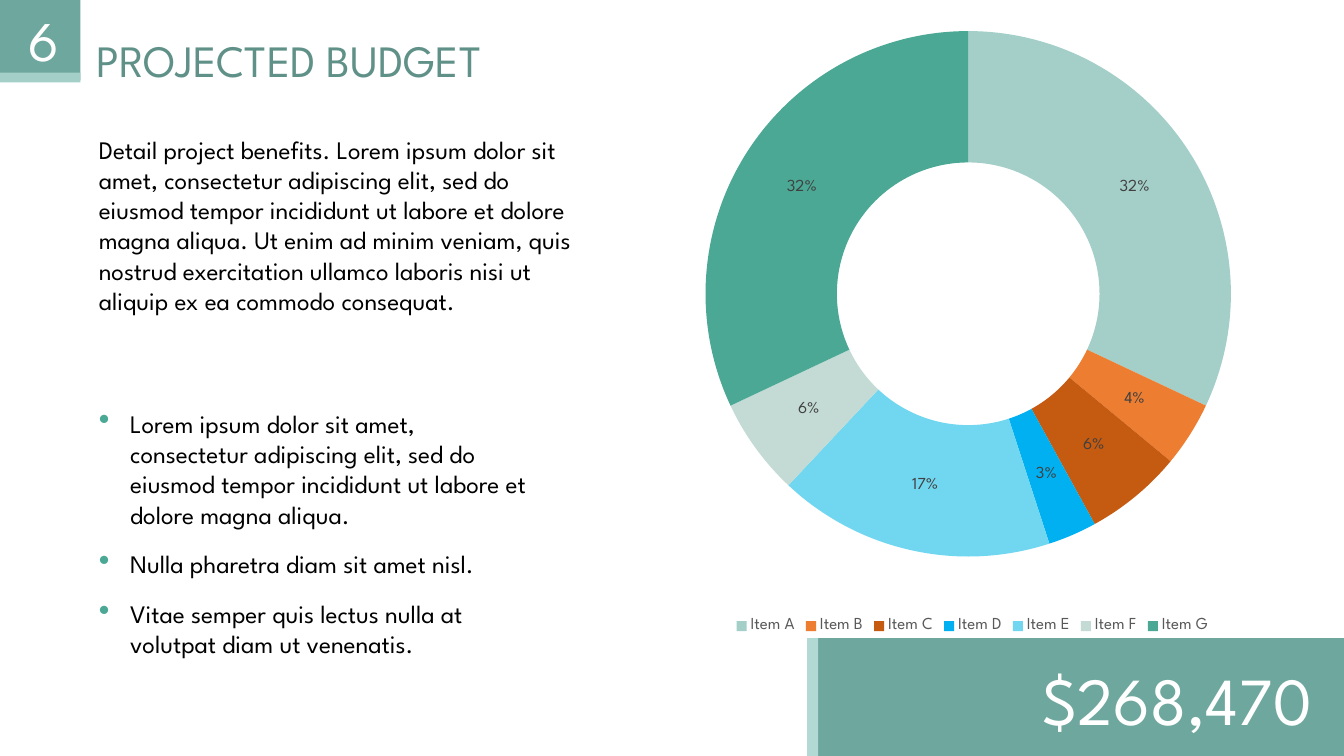
from lxml.etree import SubElement
from pptx import Presentation
from pptx.chart.data import CategoryChartData
from pptx.dml.color import RGBColor
from pptx.enum.chart import XL_CHART_TYPE as ChartType, XL_LEGEND_POSITION as LegendPosition
from pptx.enum.shapes import MSO_SHAPE as Preset
from pptx.enum.text import MSO_ANCHOR as Anchor, MSO_AUTO_SIZE as AutoSize, PP_ALIGN as Align
from pptx.oxml.ns import qn
from pptx.util import Cm, Pt

TITLE = "PROJECTED BUDGET"
NUMBER = "6"
AMOUNT = "$268,470"
SUMMARY = [
    "Detail project benefits. Lorem ipsum dolor sit amet, consectetur adipiscing elit, "
    "sed do eiusmod tempor incididunt ut labore et dolore magna aliqua. Ut enim ad minim "
    "veniam, quis nostrud exercitation ullamco laboris nisi ut aliquip ex ea commodo consequat."
]
BENEFITS = [
    "Lorem ipsum dolor sit amet, consectetur adipiscing elit, sed do eiusmod tempor "
    "incididunt ut labore et dolore magna aliqua.",
    "Nulla pharetra diam sit amet nisl.",
    "Vitae semper quis lectus nulla at volutpat diam ut venenatis.",
]
BUDGET = [
    ("Item A", 32, "A4CFC8"),
    ("Item B", 4, "ED7D31"),
    ("Item C", 6, "C55A11"),
    ("Item D", 3, "00B0F0"),
    ("Item E", 17, "71D6F0"),
    ("Item F", 6, "C3DBD4"),
    ("Item G", 32, "4BA895"),
]
THEME = {
    "font": "League Spartan",
    "panel": "6EA79D",
    "strip": "A4CFC8",
    "edge": "B3D9D4",
    "bullet": "4BA895",
    "title": (32, "609188"),
    "body": (18, "000000"),
    "number": (40, "FFFFFF"),
    "amount": (48, "FFFFFF"),
    "chart": (10, "000000"),
    "legend": (12, "595959"),
    "label": (12, "404040"),
}

WIDTH, HEIGHT = 33.87, 19.05
TEXT_LEFT, COLUMN = 2.24, 11.56
BADGE = 2.03
BAND_LEFT, BAND_TOP = 20.62, 16.08
EDGE_WIDTH = 0.28
CHART_LEFT = 15.14
PLOT = {"x": 0.141, "y": 0, "w": 0.707, "h": 0.921}


def apply(target, values):
    for name, value in values.items():
        setattr(target, name, value)


def style_font(font, role):
    size, color = THEME[role]
    apply(font, {"name": THEME["font"], "size": Pt(size), "bold": False})
    font.color.rgb = RGBColor.from_string(color)


def write(shape, lines, role, align=Align.LEFT, anchor=Anchor.TOP, wrap=True):
    frame = shape.text_frame
    apply(frame, {"word_wrap": wrap, "auto_size": AutoSize.NONE, "vertical_anchor": anchor})
    frame.text = "\n".join(lines)
    for paragraph in frame.paragraphs:
        paragraph.alignment = align
        style_font(paragraph.runs[0].font, role)
    return frame


def add_text(slide, box, *args, **options):
    return write(slide.shapes.add_textbox(*map(Cm, box)), *args, **options)


def add_block(slide, box, color=None, preset=Preset.RECTANGLE):
    shape = slide.shapes.add_shape(preset, *map(Cm, box))
    shape.shadow.inherit = False
    shape.line.fill.background()
    if color:
        shape.fill.solid()
        shape.fill.fore_color.rgb = RGBColor.from_string(color)
    else:
        shape.fill.background()
    return shape


def add_bullet(paragraph):
    paragraph.space_after = Pt(14)
    properties = paragraph._p.get_or_add_pPr()
    apply_indent = {"marL": Cm(0.79), "indent": -Cm(0.79)}
    for name, value in apply_indent.items():
        properties.set(name, str(int(value)))
    color = SubElement(properties, qn("a:buClr"))
    SubElement(color, qn("a:srgbClr"), val=THEME["bullet"])
    SubElement(properties, qn("a:buSzPct"), val="125000")
    SubElement(properties, qn("a:buChar"), char="•")


def place_plot(plot):
    area = plot._element.getparent()
    for layout in area.findall(qn("c:layout")):
        area.remove(layout)
    layout = SubElement(area, qn("c:layout"))
    area.insert(0, layout)
    manual = SubElement(layout, qn("c:manualLayout"))
    settings = {"layoutTarget": "inner", "xMode": "edge", "yMode": "edge", **PLOT}
    for name, value in settings.items():
        SubElement(manual, qn(f"c:{name}"), val=str(value))
    plot._element.find(qn("c:holeSize")).set("val", "29")


def add_budget_chart(slide):
    names, values, colors = zip(*BUDGET)
    data = CategoryChartData()
    data.categories = names
    data.add_series("Series 1", values)
    box = (CHART_LEFT, 0, WIDTH - CHART_LEFT, BAND_TOP)
    chart = slide.shapes.add_chart(ChartType.DOUGHNUT, *map(Cm, box), data).chart
    apply(chart, {"has_title": False, "has_legend": True})
    style_font(chart.font, "chart")
    apply(chart.legend, {"position": LegendPosition.BOTTOM, "include_in_layout": False})
    style_font(chart.legend.font, "legend")

    plot = chart.plots[0]
    apply(plot, {"vary_by_categories": True, "has_data_labels": True})
    series = plot.series[0]
    for index, color in enumerate(colors):
        point = series.points[index].format
        point.fill.solid()
        point.fill.fore_color.rgb = RGBColor.from_string(color)
        point.line.fill.background()
    labels = plot.data_labels
    apply(labels, {
        "show_percentage": True,
        "show_value": False,
        "number_format": "0%",
        "number_format_is_linked": False,
    })
    style_font(labels.font, "label")
    place_plot(plot)


def main():
    presentation = Presentation()
    apply(presentation, {"slide_width": Cm(WIDTH), "slide_height": Cm(HEIGHT)})
    slide = presentation.slides.add_slide(presentation.slide_layouts[5])

    add_text(slide, (TEXT_LEFT, 3.25, 12.88, 5.64), SUMMARY, "body")
    benefits = add_text(slide, (TEXT_LEFT, 10.16, COLUMN, 6.63), BENEFITS, "body")
    for paragraph in benefits.paragraphs:
        add_bullet(paragraph)

    title = slide.shapes.title
    apply(title, {"left": Cm(2.18), "top": Cm(0.69), "width": Cm(COLUMN), "height": Cm(1.63)})
    write(title, [TITLE], "title", wrap=False)

    add_block(slide, (0, 0, BADGE, BADGE), THEME["panel"])
    add_block(slide, (0, 1.83, BADGE, 0.25), THEME["strip"])
    badge = add_block(slide, (0.08, -0.03, BADGE, BADGE), preset=Preset.OVAL)
    write(badge, [NUMBER], "number", Align.CENTER, Anchor.MIDDLE)

    band_height = HEIGHT - BAND_TOP
    add_block(slide, (BAND_LEFT, BAND_TOP, WIDTH - BAND_LEFT, band_height), THEME["panel"])
    add_text(slide, (21.95, 16.46, 11.38, 2.31), [AMOUNT], "amount", Align.RIGHT)
    add_block(slide, (BAND_LEFT - EDGE_WIDTH, BAND_TOP, EDGE_WIDTH, band_height), THEME["edge"])

    add_budget_chart(slide)
    presentation.save("out.pptx")


if __name__ == "__main__":
    main()
